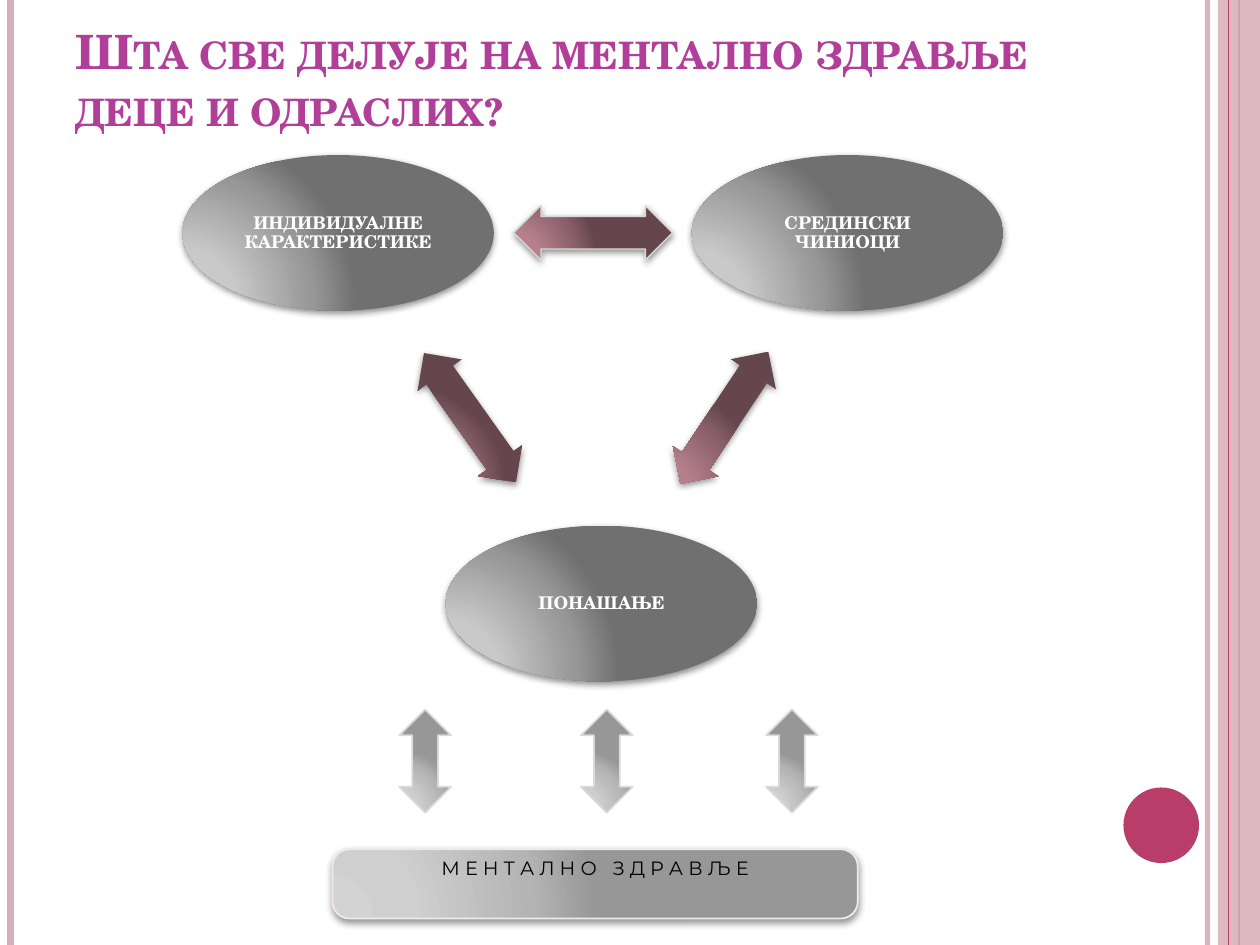
"""Build a slide on what shapes the mental health of children and adults."""
from lxml.etree import SubElement as Sub
from pptx import Presentation
from pptx.dml.color import RGBColor as RGB
from pptx.enum.shapes import MSO_CONNECTOR as Link, MSO_SHAPE as Kind
from pptx.enum.text import MSO_ANCHOR as Anchor, PP_ALIGN as Align
from pptx.oxml.ns import qn
from pptx.util import Pt

PINK = RGB(0xD8, 0xAF, 0xB9)
ROSE = RGB(0xB8, 0x3D, 0x68)
PLUM = RGB(0xB1, 0x3F, 0x9A)
PALE = RGB(0xF4, 0xE7, 0xED)
SILVER = RGB(0xD9, 0xD9, 0xD9)
WHITE = RGB(0xFF, 0xFF, 0xFF)
BLACK = RGB(0, 0, 0)
GREY = [RGB(v, v, v) for v in (0xD1, 0xC9, 0x97, 0x70)]
LIGHT = [RGB(v, v, v) for v in (0xD3, 0xCF, 0xB4, 0x97)]
MAUVE = [RGB(0xBC, 0x85, 0x91), RGB(0xB5, 0x80, 0x8C),
         RGB(0x89, 0x5F, 0x69), RGB(0x65, 0x46, 0x4D)]
STOPS = (0, 30, 75, 100)
FOCUS = {"l": 5, "t": 100, "r": 120, "b": 10}
SERIF = "TeX Gyre Schola"
SANS = "Montserrat"


def fade(shape, pct):
    """Make the first solid colour of a shape partly transparent."""
    tone = next(shape._element.spPr.iter(qn("a:srgbClr")))
    Sub(tone, qn("a:alpha"), val=str(pct * 1000))


def glow(shape, tones):
    """Fill a shape with a circular gradient."""
    shape.fill.background()
    props = shape._element.spPr
    grad = Sub(props, qn("a:gradFill"), rotWithShape="1")
    props.replace(props.find(qn("a:noFill")), grad)
    stops = Sub(grad, qn("a:gsLst"))
    for pos, tone in zip(STOPS, tones):
        stop = Sub(stops, qn("a:gs"), pos=str(pos * 1000))
        Sub(stop, qn("a:srgbClr"), val=str(tone))
    ring = Sub(grad, qn("a:path"), path="circle")
    Sub(ring, qn("a:fillToRect"), {k: str(v * 1000) for k, v in FOCUS.items()})


def shade(shape):
    """Drop a soft shadow below a shape."""
    soft = Sub(shape._element.spPr.find(qn("a:effectLst")), qn("a:outerShdw"),
               blurRad=str(Pt(4)), dist=str(Pt(1.6)), dir="5400000", rotWithShape="0")
    Sub(Sub(soft, qn("a:srgbClr"), val="000000"), qn("a:alpha"), val="42000")


def form(slide, kind, box, fill, edge=None, width=1):
    """Add a shape with a plain or gradient fill."""
    shape = slide.shapes.add_shape(kind, *map(Pt, box))
    shape.shadow.inherit = False
    if isinstance(fill, list):
        glow(shape, fill)
    else:
        shape.fill.solid()
        shape.fill.fore_color.rgb = fill
    if edge is None:
        shape.line.fill.background()
    else:
        shape.line.color.rgb = edge
        shape.line.width = Pt(width)
    return shape


def rule(slide, x, width, tone):
    """Add a full-height vertical line."""
    line = slide.shapes.add_connector(Link.STRAIGHT, Pt(x), 0, Pt(x), Pt(540))
    line.line.color.rgb = tone
    line.line.width = Pt(width)
    Sub(line._element.spPr, qn("a:effectLst"))
    return line


def style(para, face, size, tone, bold=False):
    """Format every run of a paragraph."""
    for run in para.runs:
        font = run.font
        font.name, font.size, font.bold = face, Pt(size), bold
        font.color.rgb = tone


def frame(slide):
    """Draw the border lines, side band and disc."""
    fade(rule(slide, 690, 3, PINK), 93)
    rule(slide, 6, 4.5, PINK)
    rule(slide, 708, 1.5, ROSE)
    fade(form(slide, Kind.RECTANGLE, (696, 0, 24, 540), PINK), 87)
    rule(slide, 702, 0.75, ROSE)
    form(slide, Kind.OVAL, (642, 450, 43.2, 43.2), ROSE)


def title(slide, text):
    """Add the heading in small capitals."""
    box = slide.shapes.add_textbox(Pt(36), Pt(9), Pt(588), Pt(90))
    body = box.text_frame
    body.word_wrap = True
    body.text = text
    para = body.paragraphs[0]
    style(para, SERIF, 27, PLUM, True)
    para.runs[0]._r.get_or_add_rPr().set("cap", "small")


def factor(slide, x, y, text):
    """Add a labelled ellipse."""
    oval = form(slide, Kind.OVAL, (x, y, 178, 89), GREY)
    shade(oval)
    body = oval.text_frame
    body.word_wrap = True
    body.vertical_anchor = Anchor.MIDDLE
    body.margin_left = body.margin_right = Pt(3)
    body.margin_top = body.margin_bottom = Pt(3)
    body.text = text
    para = body.paragraphs[0]
    para.alignment = Align.CENTER
    para.line_spacing = 0.9
    style(para, SERIF, 10, WHITE, True)


def arrow(slide, x, y, turn=0, edge=None):
    """Add a two-way arrow between factors."""
    shape = form(slide, Kind.LEFT_RIGHT_ARROW, (x, y, 90.7, 31), MAUVE, edge, 0.75)
    shape.adjustments[0] = 0.6
    shape.adjustments[1] = 0.5
    shape.rotation = turn
    shade(shape)


def result(slide, words):
    """Add the bar with the spaced-out outcome."""
    bar = form(slide, Kind.ROUNDED_RECTANGLE, (190, 485.3, 300.2, 39.6), LIGHT, PALE)
    bar.adjustments[0] = 0.245
    shade(bar)
    body = bar.text_frame
    body.word_wrap = True
    body.vertical_anchor = Anchor.TOP
    body.margin_top = Pt(1)
    para = body.paragraphs[0]
    para.alignment = Align.CENTER
    first, last = (" ".join(word) for word in words.split())
    for part in (first, " ", last):
        para.add_run().text = part
    style(para, SANS, 11, BLACK)
    para.runs[1]._r.get_or_add_rPr().set("spc", "580")


def main():
    """Build and save the slide."""
    deck = Presentation()
    deck.slide_width, deck.slide_height = Pt(720), Pt(540)
    slide = deck.slides.add_slide(deck.slide_layouts[6])
    frame(slide)
    title(slide, "Шта све делује на ментално здравље деце и одраслих?")
    factor(slide, 395.3, 88.6, "СРЕДИНСКИ ЧИНИОЦИ")
    arrow(slide, 368.6, 223.2, 123.6)
    factor(slide, 254.7, 300.4, "ПОНАШАЊЕ")
    arrow(slide, 223.2, 223.2, 234.6)
    factor(slide, 104.2, 88.6, "ИНДИВИДУАЛНЕ КАРАКТЕРИСТИКЕ")
    arrow(slide, 293.6, 117.5, edge=SILVER)
    for x in (332, 437.8, 228.2):
        form(slide, Kind.UP_DOWN_ARROW, (x, 405.4, 29.5, 59), LIGHT, SILVER)
    result(slide, "МЕНТАЛНО ЗДРАВЉЕ")
    deck.save("out.pptx")


if __name__ == "__main__":
    main()
